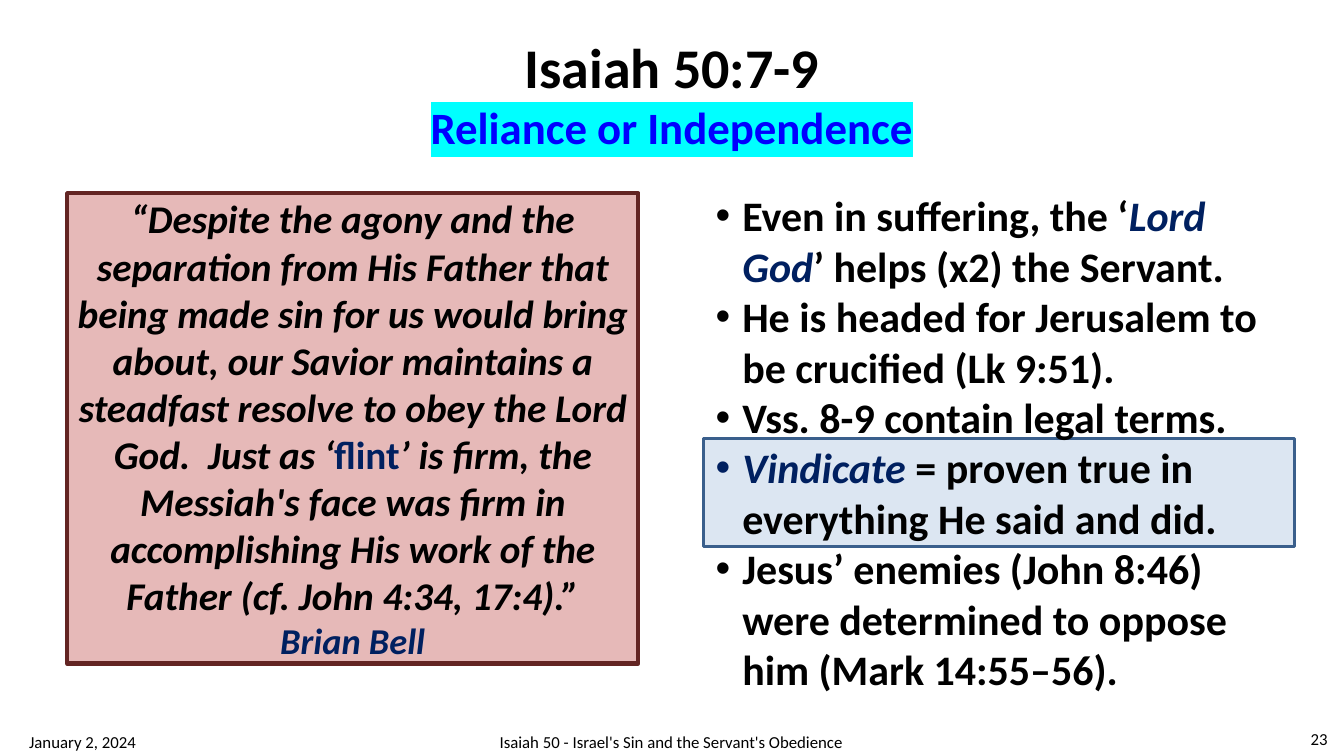
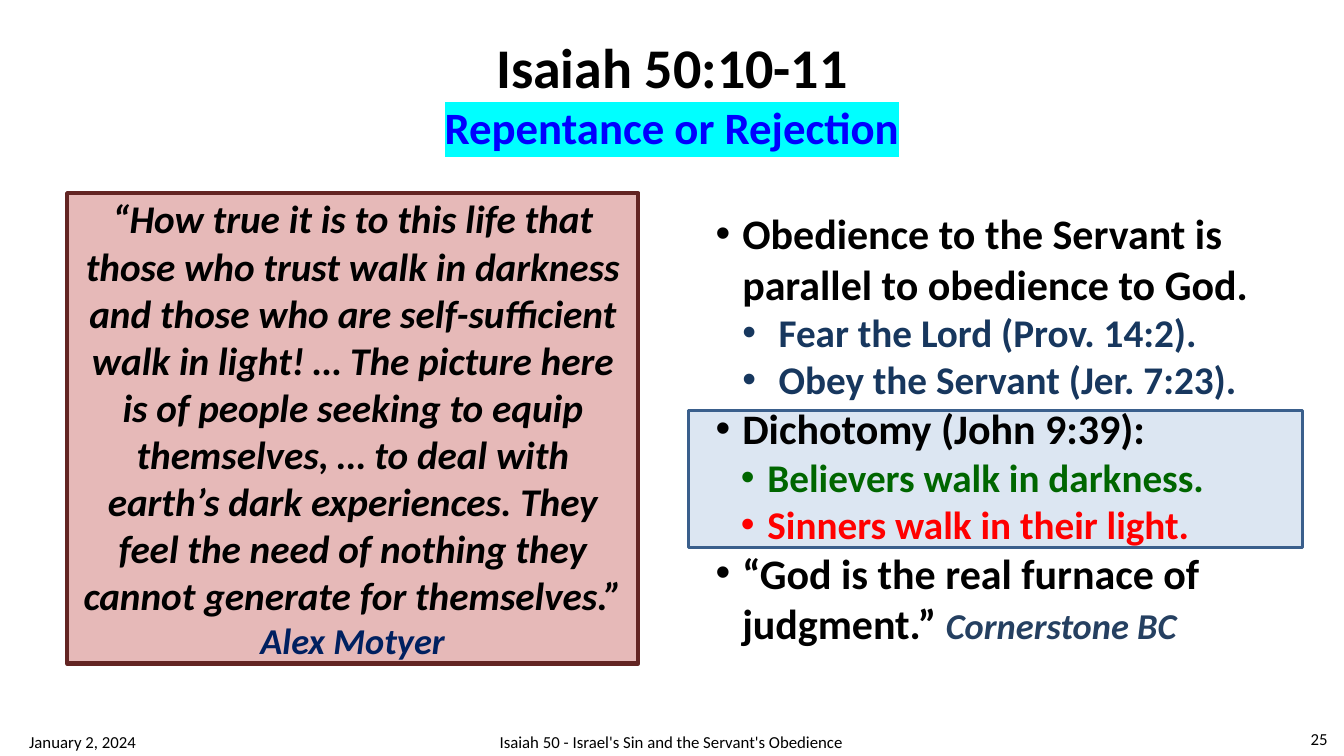
from dataclasses import dataclass
from typing import NamedTuple

from lxml.etree import SubElement
from pptx import Presentation
from pptx.dml.color import RGBColor
from pptx.enum.shapes import MSO_SHAPE
from pptx.enum.text import MSO_ANCHOR, MSO_AUTO_SIZE, PP_ALIGN
from pptx.oxml.ns import qn
from pptx.util import Pt


class Box(NamedTuple):
    left: float
    top: float
    width: float
    height: float

    def within(self, dx, dy, width, height):
        return Box(self.left + dx, self.top + dy, width, height)

    def lengths(self):
        return [Pt(value) for value in self]


@dataclass(frozen=True)
class Theme:
    font: str = "Calibri"
    ink: str = "000000"
    navy: str = "002060"
    steel: str = "17375E"
    slate: str = "254061"
    green: str = "006600"
    red: str = "FF0000"
    blue: str = "0000FF"
    cyan: str = "00FFFF"
    rose: str = "E6B9B8"
    maroon: str = "632523"
    pale_blue: str = "DCE6F2"
    mid_blue: str = "3A5F8C"
    title_size: int = 40
    subtitle_size: int = 32
    point_size: int = 30
    text_size: int = 28
    credit_size: int = 26
    footer_size: int = 12


THEME = Theme()
PAGE = Box(0, 0, 960, 540)
TITLE = Box(48, 21.6, 864, 90)
QUOTE = Box(48, 138, 408, 336)
POINTS_LEFT, POINTS_TOP, POINTS_WIDTH = 504, 127.4, 409
FOOTER = Box(0, 517.6, PAGE.width, 22.4)
LECTURE_DATE = "January 2, 2024"
LECTURE = "Isaiah 50 - Israel's Sin and the Servant's Obedience"


@dataclass(frozen=True)
class Span:
    text: str
    color: str = THEME.ink
    italic: bool = False
    size: int = 0  # 0 takes the size of the paragraph


@dataclass(frozen=True)
class Point:
    spans: tuple
    level: int = 0
    margin: float = 19
    hang: float = 19


def style(run, size, color=THEME.ink, bold=True, italic=False):
    font = run.font
    font.name, font.size = THEME.font, Pt(size)
    font.bold, font.italic = bold, italic
    font.color.rgb = RGBColor.from_string(color)


def add_spans(paragraph, spans, size):
    for span in spans:
        run = paragraph.add_run()
        run.text = span.text
        style(run, span.size or size, span.color, italic=span.italic)


def mark(run, color):
    """Put a marker colour behind a run that already has its fill."""
    fill = run.font._element.find(qn("a:solidFill"))
    highlight = SubElement(run.font._element, qn("a:highlight"))
    SubElement(highlight, qn("a:srgbClr"), val=color)
    fill.addnext(highlight)


def set_frame(shape):
    frame = shape.text_frame
    frame.word_wrap = True
    frame.auto_size = MSO_AUTO_SIZE.NONE
    frame.vertical_anchor = MSO_ANCHOR.MIDDLE
    return frame


def place(shape, box):
    shape.left, shape.top, shape.width, shape.height = box.lengths()


def add_panel(slide, box, fill, line, weight):
    panel = slide.shapes.add_shape(MSO_SHAPE.RECTANGLE, *box.lengths())
    panel.shadow.inherit = False
    panel.fill.solid()
    panel.fill.fore_color.rgb = RGBColor.from_string(fill)
    panel.line.color.rgb = RGBColor.from_string(line)
    panel.line.width = Pt(weight)
    return panel


def add_title(slide, box, passage, topic):
    title = slide.shapes.title
    place(title, box)
    frame = set_frame(title)
    frame.text = f"{passage}\n{topic}"
    for paragraph in frame.paragraphs:
        paragraph.alignment = PP_ALIGN.CENTER
    passage_run, topic_run = (p.runs[0] for p in frame.paragraphs)
    style(passage_run, THEME.title_size)
    style(topic_run, THEME.subtitle_size, THEME.blue)
    mark(topic_run, THEME.cyan)


def add_quote(slide, box, quote, author):
    frame = set_frame(add_panel(slide, box, THEME.rose, THEME.maroon, 3))
    words, credit = frame.paragraphs[0], frame.add_paragraph()
    add_spans(words, quote, THEME.text_size)
    add_spans(credit, [Span(author, THEME.navy, True)], THEME.credit_size)
    for paragraph in (words, credit):
        paragraph.alignment = PP_ALIGN.CENTER


def add_points(slide, box, points, emphasis):
    # The emphasis panel lies behind the list
    panel = add_panel(slide, box.within(*emphasis), THEME.pale_blue, THEME.mid_blue, 2)
    slide.shapes._spTree.insert(2, panel._element)

    body = slide.placeholders[1]
    place(body, box)
    frame = set_frame(body)
    for index, point in enumerate(points):
        paragraph = frame.add_paragraph() if index else frame.paragraphs[0]
        paragraph.level = point.level
        paragraph.alignment = PP_ALIGN.LEFT
        paragraph.space_before = Pt(0)
        properties = paragraph._p.get_or_add_pPr()
        properties.set("marL", str(Pt(point.margin)))
        properties.set("indent", str(-Pt(point.hang)))
        SubElement(properties, qn("a:buFont"), typeface="Arial")
        SubElement(properties, qn("a:buChar"), char="•")
        size = THEME.text_size if point.level else THEME.point_size
        add_spans(paragraph, point.spans, size)


def add_footer(slide, box, number):
    for text, dx, dy, width, alignment in (
        (LECTURE_DATE, 13.7, 2.4, 165, PP_ALIGN.LEFT),
        (LECTURE, 147.6, 2.4, 664, PP_ALIGN.CENTER),
        (number, 883.4, 0, 72, PP_ALIGN.RIGHT),
    ):
        note = slide.shapes.add_textbox(*box.within(dx, dy, width, 20).lengths())
        frame = set_frame(note)
        frame.text = text
        frame.paragraphs[0].alignment = alignment
        style(frame.paragraphs[0].runs[0], THEME.footer_size, bold=False)


def add_study_slide(deck, passage, topic, quote, author, points,
                    points_height, emphasis, number):
    slide = deck.slides.add_slide(deck.slide_layouts[1])
    add_title(slide, TITLE, passage, topic)
    add_quote(slide, QUOTE, quote, author)
    points_box = Box(POINTS_LEFT, POINTS_TOP, POINTS_WIDTH, points_height)
    add_points(slide, points_box, points, emphasis)
    add_footer(slide, FOOTER, number)


def subpoint(text, color, margin, hang):
    return Point((Span(text, color),), 1, margin, hang)


STUDIES = (
    dict(
        passage="Isaiah 50:7-9",
        topic="Reliance or Independence",
        quote=(
            Span("“Despite the agony and the separation from His Father that "
                 "being made sin for us would bring about, our Savior maintains "
                 "a steadfast resolve to obey the Lord God.  Just as ‘", italic=True),
            Span("flint", THEME.navy),
            Span("’ is firm, the Messiah's face was firm in accomplishing His "
                 "work of the Father (cf. John 4:34, 17:4).”", italic=True),
        ),
        author="Brian Bell",
        points=(
            Point((Span("Even in suffering, the ‘"),
                   Span("Lord God", THEME.navy, True),
                   Span("’ helps (x2) the Servant."))),
            Point((Span("He is headed for Jerusalem to be crucified (Lk 9:51)."),)),
            Point((Span("Vss. 8-9 contain legal terms."),)),
            Point((Span("Vindicate", THEME.navy, True),
                   Span(" = proven true in everything He said and did."))),
            Point((Span("Jesus’ enemies (John 8:46) were determined to oppose "
                        "him (Mark 14:55–56)."),)),
        ),
        points_height=376.6,
        emphasis=(-1.5, 185.8, 422, 77),
        number="23",
    ),
    dict(
        passage="Isaiah 50:10-11",
        topic="Repentance or Rejection",
        quote=(
            Span("“How true it is to this life that those who trust walk in "
                 "darkness and those who are self-sufficient walk in light! … "
                 "The picture here is of people seeking to equip themselves, … "
                 "to deal with earth’s dark experiences. They feel the need of "
                 "nothing they cannot generate for themselves.”", italic=True),
        ),
        author="Alex Motyer",
        points=(
            Point((Span("Obedience to the Servant is parallel to obedience to God."),)),
            subpoint("Fear the Lord (Prov. 14:2).", THEME.steel, 45, 26),
            subpoint("Obey the Servant (Jer. 7:23).", THEME.steel, 45, 26),
            Point((Span("Dichotomy (John 9:39):"),)),
            subpoint("Believers walk in darkness.", THEME.green, 37, 19),
            subpoint("Sinners walk in their light.", THEME.red, 37, 19),
            Point((Span("“God is the real furnace of judgment.” "),
                   Span("Cornerstone BC", THEME.slate, True, THEME.credit_size))),
        ),
        points_height=356.4,
        emphasis=(-12.2, 165.6, 438.5, 98),
        number="25",
    ),
)


def main():
    deck = Presentation()
    deck.slide_width, deck.slide_height = Pt(PAGE.width), Pt(PAGE.height)
    for study in STUDIES:
        add_study_slide(deck, **study)
    deck.save("out.pptx")


if __name__ == "__main__":
    main()
